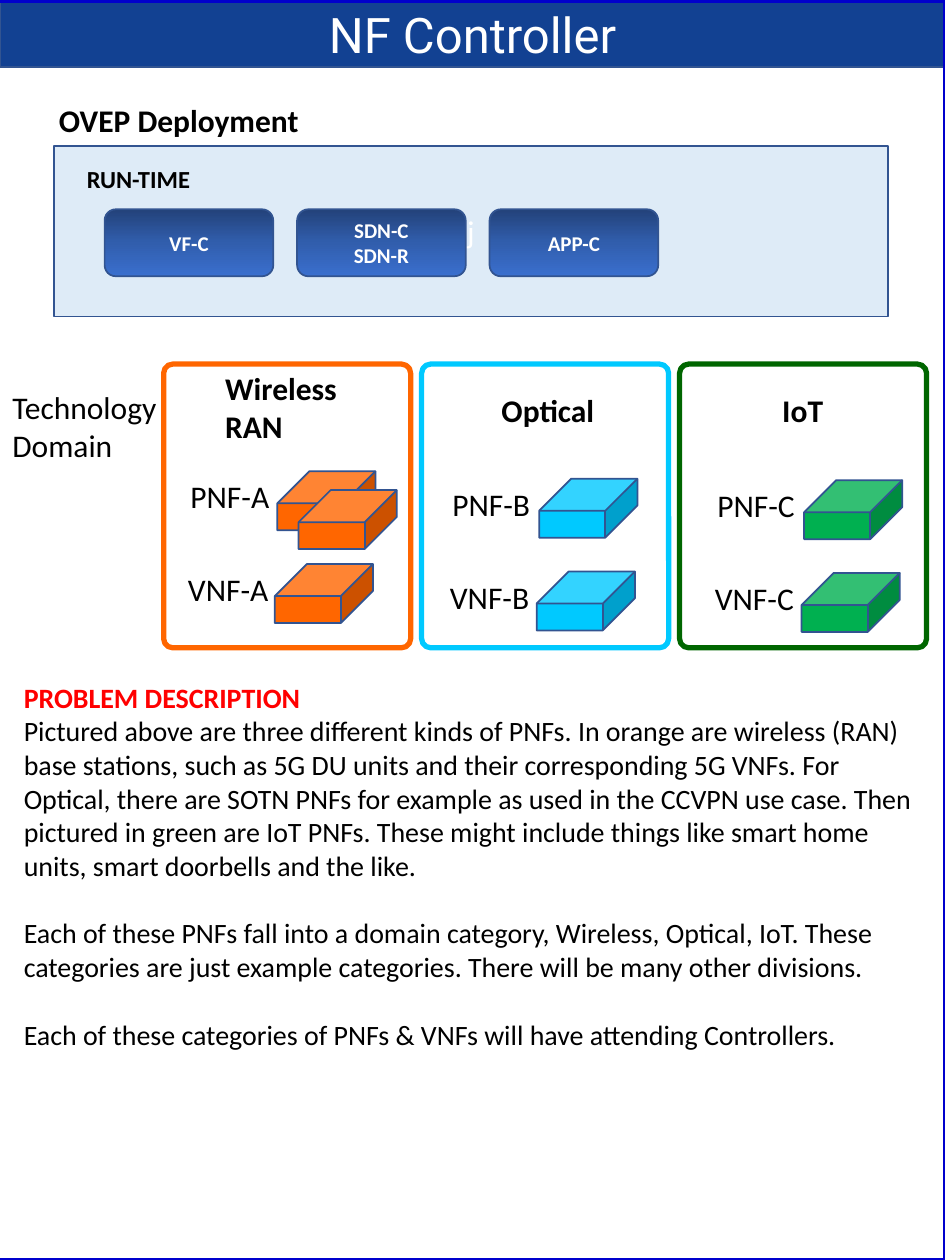
"""Build the NF Controller slide."""
import copy

import pptx
import pptx.dml.color
import pptx.enum.shapes
import pptx.enum.text
import pptx.oxml.ns
import pptx.util

Cm = pptx.util.Cm
Pt = pptx.util.Pt
SHAPES = pptx.enum.shapes.MSO_SHAPE
ALIGN = pptx.enum.text.PP_ALIGN
MIDDLE = pptx.enum.text.MSO_ANCHOR.MIDDLE
color = pptx.dml.color.RGBColor.from_string
EDGE = "325491"

deck = pptx.Presentation()
deck.slide_width, deck.slide_height = Cm(19.05), Cm(25.4)
page = deck.slides.add_slide(deck.slide_layouts[5])


def add_box(kind, left, top, width, height, fill, line=EDGE, weight=1, corner=None):
    box = page.shapes.add_shape(kind, Cm(left), Cm(top), Cm(width), Cm(height))
    box.shadow.inherit = False
    if fill:
        box.fill.solid()
        box.fill.fore_color.rgb = color(fill)
    else:
        box.fill.background()
    box.line.color.rgb = color(line)
    box.line.width = Pt(weight)
    if corner is not None:
        box.adjustments[0] = corner
    return box


def add_text(text, left, top, width, height, size=18, bold=False, wrap=False):
    box = page.shapes.add_textbox(Cm(left), Cm(top), Cm(width), Cm(height))
    frame = box.text_frame
    frame.word_wrap = wrap
    frame.text = text
    for para in frame.paragraphs:
        para.font.name = "Calibri"
        para.font.size = Pt(size)
        para.font.bold = bold
        para.font.color.rgb = color("000000")
    return frame


title = page.shapes.title
title.left, title.top, title.width, title.height = Cm(0), Cm(0.03), Cm(19.05), Cm(1.32)
title.fill.solid()
title.fill.fore_color.rgb = color("124192")
title.line.color.rgb = color(EDGE)
title.line.width = Pt(1)
title.text_frame.text = "NF Controller"
title.text_frame.vertical_anchor = MIDDLE
heading = title.text_frame.paragraphs[0]
heading.alignment = ALIGN.CENTER
heading.font.name = "Roboto"
heading.font.size = Pt(28)
heading.font.color.rgb = color("FFFFFF")

add_box(SHAPES.RECTANGLE, -0.03, 0.03, 19.08, 25.37, None, "0000CC", 2.25)

add_text("OVEP Deployment", 0.94, 1.91, 5.51, 1.02, bold=True)
runtime = add_box(SHAPES.RECTANGLE, 1.09, 2.95, 16.81, 3.43, "DEEBF7")
runtime.text_frame.text = "j"
runtime_para = runtime.text_frame.paragraphs[0]
runtime_para.alignment = ALIGN.CENTER
runtime_para.font.name = "Calibri"
runtime_para.font.size = Pt(18)
runtime_para.font.color.rgb = color("FFFFFF")
add_text("RUN-TIME", 1.5, 3.18, 3.63, 0.86, size=14, bold=True)

gradient = [(0, "23427A"), (0.5, "315EAD"), (1, "3A6FCE")]
for index, label in enumerate(["VF-C", "SDN-C\nSDN-R", "APP-C"]):
    controller = add_box(SHAPES.ROUNDED_RECTANGLE, 2.11 + 3.88 * index, 4.22, 3.4, 1.35, None)
    controller.fill.gradient()
    controller.fill.gradient_angle = 270
    stop_list = next(controller._element.iter(pptx.oxml.ns.qn("a:gsLst")))
    stop_list.append(copy.deepcopy(stop_list[0]))
    for stop, (position, shade) in zip(controller.fill.gradient_stops, gradient):
        stop.position = position
        stop.color.rgb = color(shade)
    controller.text_frame.text = label
    controller.text_frame.vertical_anchor = MIDDLE
    for para in controller.text_frame.paragraphs:
        para.alignment = ALIGN.CENTER
        para.font.name = "Calibri"
        para.font.size = Pt(12)
        para.font.bold = True
        para.font.color.rgb = color("FFFFFF")

add_text("Technology\nDomain", 0, 7.7, 3.45, 1.8)
domains = [
    ("A", "Wireless\nRAN", 4.29, 7.32, 2.77, 1.8, "FF6600", "FF6600", 5.59, 9.5),
    ("B", "Optical", 9.86, 7.75, 2.39, 1.02, "00C9FF", "00C9FF", 10.87, 9.65),
    ("C", "IoT", 15.52, 7.75, 1.35, 1.02, "00B050", "006600", 16.21, 9.68),
]
for index, domain in enumerate(domains):
    letter, name, left, top, width, height, fill, border, cube_left, cube_top = domain
    add_box(SHAPES.ROUNDED_RECTANGLE, 3.3 + 5.2 * index, 7.34, 4.98, 5.72, None, border, 3, 0.037)
    add_text(name, left, top, width, height, bold=True)
    for row, function in enumerate(["PNF", "VNF"]):
        x, y = cube_left - 0.05 * row, cube_top + 1.87 * row
        add_box(SHAPES.CUBE, x, y, 1.98, 1.19, fill, corner=0.544)
        add_text(f"{function}-{letter}", x - 2, y, 2.13, 1.02)
add_box(SHAPES.CUBE, 6.02, 9.88, 1.98, 1.19, "FF6600", corner=0.544)

description = add_text(
    "PROBLEM DESCRIPTION\n"
    "Pictured above are three different kinds of PNFs. In orange are wireless (RAN) base "
    "stations, such as 5G DU units and their corresponding 5G VNFs. For Optical, there are "
    "SOTN PNFs for example as used in the CCVPN use case. Then pictured in green are IoT PNFs. "
    "These might include things like smart home units, smart doorbells and the like.\n"
    "Each of these PNFs fall into a domain category, Wireless, Optical, IoT. These categories "
    "are just example categories. There will be many other divisions.\n"
    "Each of these categories of PNFs & VNFs will have attending Controllers.",
    0.23, 13.59, 18.47, 7.77, size=16, wrap=True)
description.paragraphs[0].font.bold = True
description.paragraphs[0].font.color.rgb = color("FF0000")
for para in description.paragraphs[2:]:
    para.space_before = Pt(19.5)

deck.save("out.pptx")
